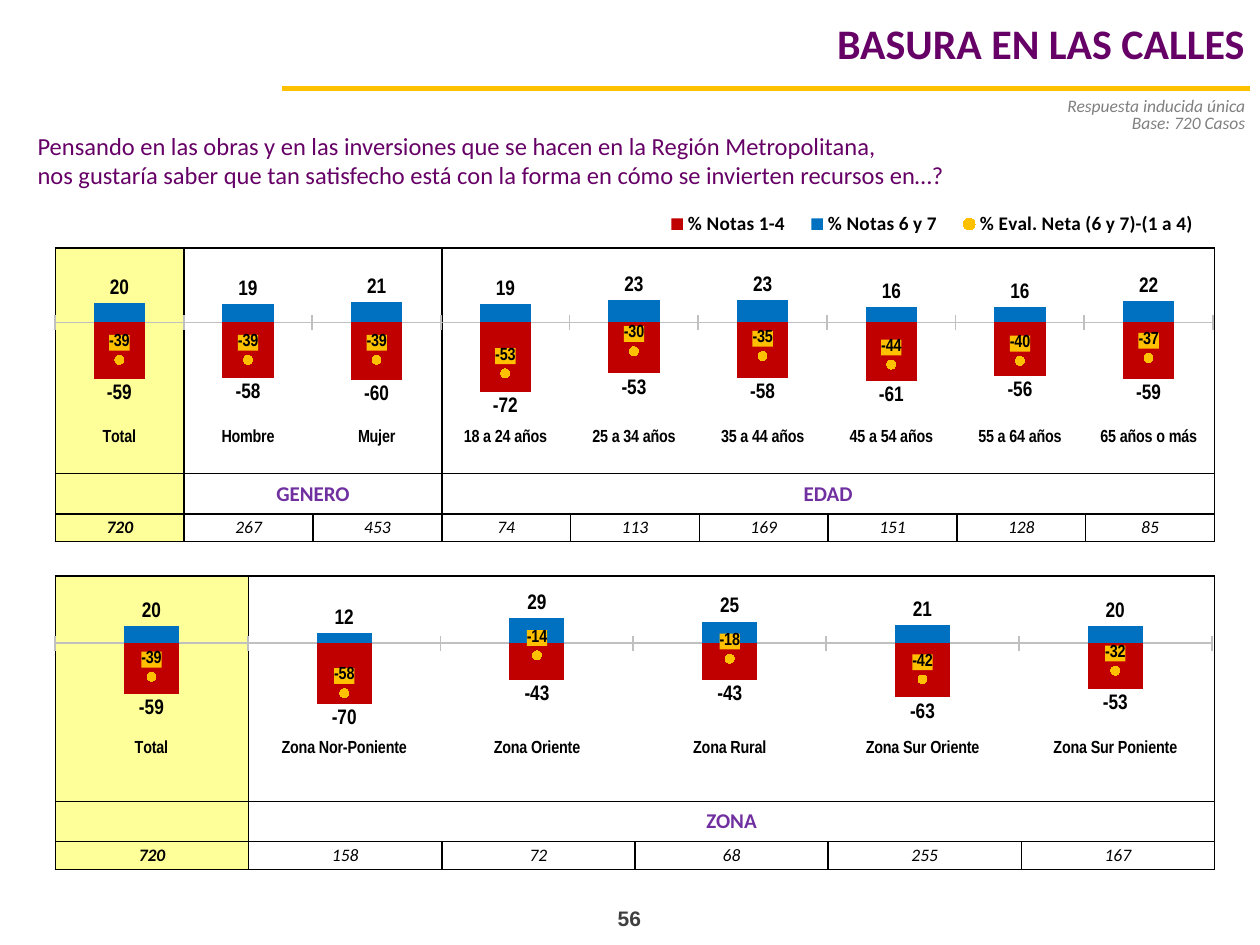
import pptx
import pptx.chart.data
import pptx.dml.color
import pptx.enum.chart
import pptx.enum.shapes
import pptx.enum.text
import pptx.oxml
import pptx.oxml.ns
import pptx.util

Inches, Pt = pptx.util.Inches, pptx.util.Pt
qn = pptx.oxml.ns.qn
ALIGN = pptx.enum.text.PP_ALIGN
ANCHOR = pptx.enum.text.MSO_ANCHOR
LABEL = pptx.enum.chart.XL_LABEL_POSITION

RED, BLUE, YELLOW = "C00000", "0070C0", "FFC000"
PURPLE, VIOLET, BLACK = "660066", "7030A0", "000000"
PALE_YELLOW = "FFFF99"
ROW_HEIGHTS = (1.79, 0.32, 0.22)
TABLE_WIDTH = 9.2


def color(value):
    """Turn a hex string into a colour."""
    return pptx.dml.color.RGBColor.from_string(value)


def xml(markup):
    """Parse markup that uses the chart and drawing prefixes."""
    head, tail = markup.split(">", 1)
    slash = "/" if head.endswith("/") else ""
    names = pptx.oxml.ns.nsdecls("c", "a")
    return pptx.oxml.parse_xml(f"{head.rstrip('/')} {names}{slash}>{tail}")


def remove_children(parent, tag):
    """Remove every direct child that has the tag."""
    for child in parent.findall(qn(tag)):
        parent.remove(child)


def style_font(font, name, size, value, bold=False, italic=False):
    """Set the look of a font."""
    font.name, font.size = name, Pt(size)
    font.bold, font.italic = bold, italic
    font.color.rgb = color(value)


def write_lines(frame, lines, align, font, line_spacing=None, space_before=None):
    """Write one paragraph per line with a shared font."""
    frame.word_wrap = True
    for index, line in enumerate(lines):
        paragraph = frame.add_paragraph() if index else frame.paragraphs[0]
        paragraph.alignment = align
        if line_spacing:
            paragraph.line_spacing = Pt(line_spacing)
        if index and space_before:
            paragraph.space_before = Pt(space_before)
        run = paragraph.add_run()
        run.text = line
        style_font(run.font, *font)


def add_text(slide, box, lines, align, font, **spacing):
    """Add a text box."""
    shape = slide.shapes.add_textbox(*map(Inches, box))
    write_lines(shape.text_frame, lines, align, font, **spacing)


def add_title(slide, text):
    """Place and fill the title placeholder."""
    title = slide.shapes.title
    title.left, title.top = Inches(0.81), Inches(0)
    title.width, title.height = Inches(9.17), Inches(0.68)
    title.text_frame.vertical_anchor = ANCHOR.MIDDLE
    write_lines(title.text_frame, [text], ALIGN.RIGHT, ("Calibri", 24, PURPLE, True))


def add_rule(slide):
    """Draw the line under the title."""
    line = slide.shapes.add_connector(
        pptx.enum.shapes.MSO_CONNECTOR.STRAIGHT,
        Inches(2.24), Inches(0.7), Inches(9.92), Inches(0.7))
    line.line.color.rgb = color(YELLOW)
    line.line.width = Pt(3)
    line._element.spPr.append(xml("<a:effectLst/>"))


def style_cell(cell, fill):
    """Give a cell black borders, thin margins and its fill."""
    cell.margin_left = cell.margin_right = Inches(0.01)
    cell.margin_top = cell.margin_bottom = 0
    cell.vertical_anchor = ANCHOR.MIDDLE
    properties = cell._tc.get_or_add_tcPr()
    for side in "LRTB":
        properties.append(xml(
            f'<a:ln{side} w="12700"><a:solidFill><a:srgbClr val="{BLACK}"/>'
            f'</a:solidFill></a:ln{side}>'))
    if fill:
        cell.fill.solid()
        cell.fill.fore_color.rgb = color(fill)
    else:
        cell.fill.background()


def add_frame_table(slide, top, groups, bases):
    """Add the grid of group headings and bases that frames a chart."""
    count = len(bases)
    table = slide.shapes.add_table(
        3, count, Inches(0.44), Inches(top),
        Inches(TABLE_WIDTH), Inches(sum(ROW_HEIGHTS))).table
    table.first_row = table.horz_banding = False
    for row, height in zip(table.rows, ROW_HEIGHTS):
        row.height = Inches(height)
        for index, cell in enumerate(row.cells):
            style_cell(cell, None if index else PALE_YELLOW)
    for index, base in enumerate(bases):
        table.columns[index].width = Inches(TABLE_WIDTH / count)
        write_lines(table.cell(2, index).text_frame, [str(base)], ALIGN.CENTER,
                    ("Calibri", 10, BLACK, index == 0, True))
    first = 1
    for name, span in groups:
        for row in (0, 1):
            table.cell(row, first).merge(table.cell(row, first + span - 1))
        write_lines(table.cell(1, first).text_frame, [name], ALIGN.CENTER,
                    ("Calibri", 12, VIOLET, True))
        first += span


def layout(x, y, width, height, inner=False):
    """Build a manual chart layout."""
    target = '<c:layoutTarget val="inner"/>' if inner else ""
    return xml(
        f'<c:layout><c:manualLayout>{target}<c:xMode val="edge"/><c:yMode val="edge"/>'
        f'<c:x val="{x}"/><c:y val="{y}"/><c:w val="{width}"/><c:h val="{height}"/>'
        '</c:manualLayout></c:layout>')


def split_net_series(chart):
    """Move the last series into a line plot on the same axes."""
    bars = chart._chartSpace.find(".//" + qn("c:barChart"))
    series = bars.findall(qn("c:ser"))[-1]
    remove_children(series, "c:invertIfNegative")
    lines = xml('<c:lineChart><c:grouping val="standard"/><c:varyColors val="0"/>'
                '<c:marker val="1"/></c:lineChart>')
    lines.insert(2, series)
    for axis in bars.findall(qn("c:axId")):
        lines.append(xml(f'<c:axId val="{axis.get("val")}"/>'))
    bars.addnext(lines)


def add_labels(series, size, position):
    """Show the values of a series."""
    labels = series.data_labels
    labels.show_value = True
    labels.number_format, labels.number_format_is_linked = "#,##0", False
    labels.position = position
    style_font(labels.font, "Arial Narrow", size, BLACK, True)
    return labels


def style_axes(chart):
    """Format the category axis and hide the value axis."""
    axis = chart.category_axis
    axis.tick_label_position = pptx.enum.chart.XL_TICK_LABEL_POSITION.LOW
    axis.major_tick_mark = pptx.enum.chart.XL_TICK_MARK.CROSS
    axis.format.line.color.rgb = color("C0C0C0")
    axis.format.line.width = Pt(1)
    style_font(axis.tick_labels.font, "Arial Narrow", 10, BLACK, True)
    values = chart.value_axis
    values.minimum_scale, values.maximum_scale, values.major_unit = -100, 50, 25
    values.has_major_gridlines = values.visible = False


def add_score_chart(slide, box, categories, series, plot_box, gap, legend_box=None):
    """Add columns for low and high scores with net score markers."""
    data = pptx.chart.data.CategoryChartData(number_format="0")
    data.categories = categories
    for name, values in series:
        data.add_series(name, values)
    chart = slide.shapes.add_chart(
        pptx.enum.chart.XL_CHART_TYPE.COLUMN_CLUSTERED, *map(Inches, box), data).chart
    chart.has_title = False
    style_font(chart.font, "Karla", 9.2, "003366", True)
    split_net_series(chart)
    style_axes(chart)

    columns, net_plot = chart.plots
    columns.gap_width, columns.overlap = gap, 100
    columns.vary_by_categories = False
    for column, fill in zip(columns.series, (RED, BLUE)):
        column.invert_if_negative = False
        column.format.fill.solid()
        column.format.fill.fore_color.rgb = color(fill)
        add_labels(column, 12, LABEL.OUTSIDE_END)

    net = net_plot.series[0]
    net.smooth = False
    net.format.line.fill.background()
    net.marker.style, net.marker.size = pptx.enum.chart.XL_MARKER_STYLE.CIRCLE, 5
    net.marker.format.fill.solid()
    net.marker.format.fill.fore_color.rgb = color(YELLOW)
    net.marker.format.line.color.rgb = color(YELLOW)
    labels = add_labels(net, 10, LABEL.ABOVE)
    labels._element.find(qn("c:numFmt")).addnext(xml(
        f'<c:spPr><a:solidFill><a:srgbClr val="{YELLOW}"/></a:solidFill></c:spPr>'))

    area = chart._chartSpace.find(".//" + qn("c:plotArea"))
    remove_children(area, "c:layout")
    area.insert(0, layout(*plot_box, inner=True))
    clear = "<c:spPr><a:noFill/><a:ln><a:noFill/></a:ln></c:spPr>"
    area.append(xml(clear))
    chart._chartSpace.find(qn("c:chart")).addnext(xml(clear))

    chart.has_legend = legend_box is not None
    if legend_box:
        legend = chart.legend
        legend.position = pptx.enum.chart.XL_LEGEND_POSITION.TOP
        legend.include_in_layout = False
        style_font(legend.font, "Calibri", 11, BLACK, True)
        remove_children(legend._element, "c:layout")
        legend._element.find(qn("c:legendPos")).addnext(layout(*legend_box))


def main():
    """Build the slide and save it."""
    presentation = pptx.Presentation()
    presentation.slide_width, presentation.slide_height = Inches(10), Inches(7.5)
    slide = presentation.slides.add_slide(presentation.slide_layouts[5])
    add_title(slide, "BASURA EN LAS CALLES")
    add_rule(slide)
    add_text(slide, (6.03, 0.8, 3.95, 0.66),
             ["Respuesta inducida única", "Base: 720 Casos"], ALIGN.RIGHT,
             ("Calibri", 10, "808080", False, True), line_spacing=5, space_before=5)
    add_text(slide, (0.2, 0.99, 8.66, 0.57),
             ["Pensando en las obras y en las inversiones que se hacen en la Región Metropolitana,",
              "nos gustaría saber que tan satisfecho está con la forma en cómo se invierten recursos en…?"],
             ALIGN.LEFT, ("Calibri", 14, PURPLE))
    add_text(slide, (3.83, 7.14, 2.33, 0.52), ["56"], ALIGN.CENTER,
             ("Arial", 12, "404040", True))

    add_frame_table(slide, 1.97, [("GENERO", 2), ("EDAD", 6)],
                    [720, 267, 453, 74, 113, 169, 151, 128, 85])
    add_score_chart(
        slide, (0.43, 1.58, 9.29, 2.49),
        ["Total", "Hombre", "Mujer", "18 a 24 años", "25 a 34 años", "35 a 44 años",
         "45 a 54 años", "55 a 64 años", "65 años o más"],
        [("% Notas 1-4", (-59, -58, -60, -72, -53, -58, -61, -56, -59)),
         ("% Notas 6 y 7", (20, 19, 21, 19, 23, 23, 16, 16, 22)),
         ("% Eval. Neta (6 y 7)-(1 a 4)", (-39, -39, -39, -53, -30, -35, -44, -40, -37))],
        (0, 0.24, 0.99, 0.46), 150, (0.51, 0.03, 0.48, 0.1))

    add_frame_table(slide, 4.57, [("ZONA", 5)], [720, 158, 72, 68, 255, 167])
    add_score_chart(
        slide, (0.43, 4.58, 9.28, 2.05),
        ["Total", "Zona Nor-Poniente", "Zona Oriente", "Zona Rural",
         "Zona Sur Oriente", "Zona Sur Poniente"],
        [("Series 1", (-59, -70, -43, -43, -63, -53)),
         ("Series 2", (20, 12, 29, 25, 21, 20)),
         ("Series 3", (-39, -58, -14, -18, -42, -32))],
        (0, 0.09, 0.99, 0.5), 250)
    presentation.save("out.pptx")


if __name__ == "__main__":
    main()
